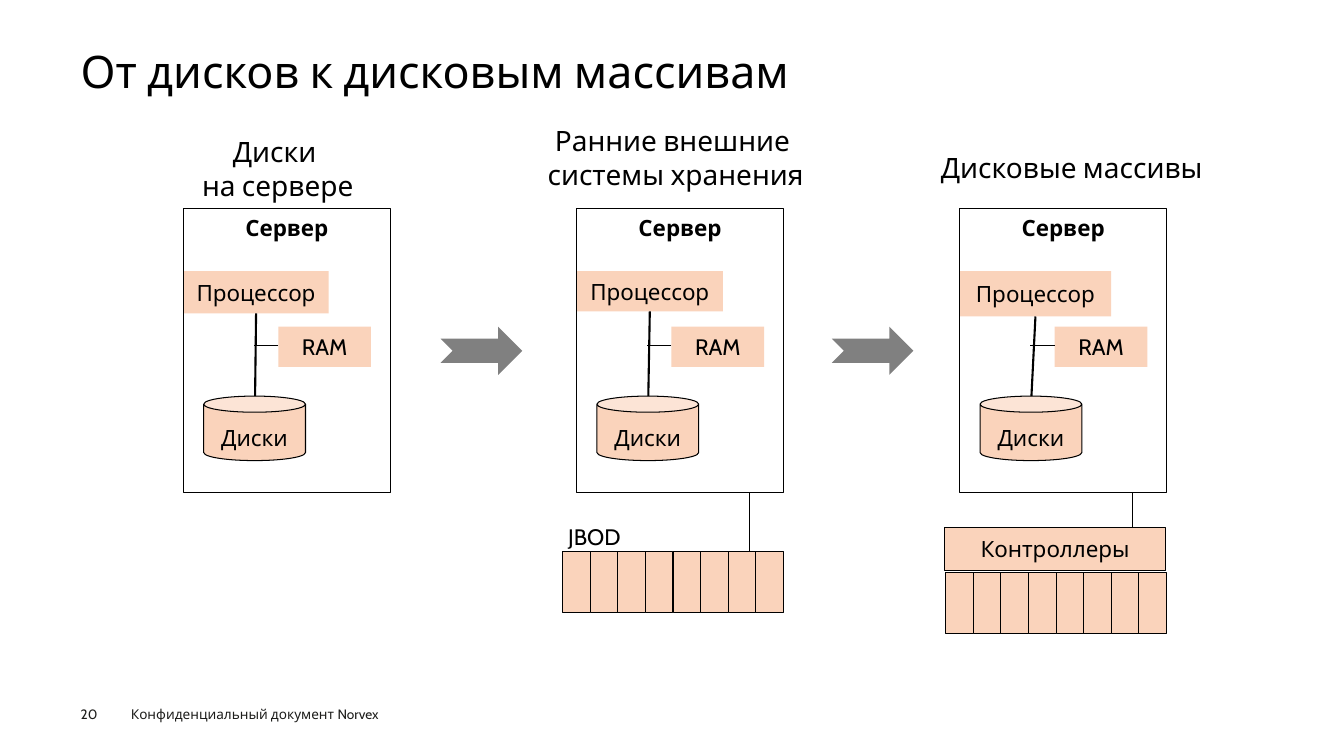
from dataclasses import dataclass

from lxml import etree
from pptx import Presentation
from pptx.dml.color import RGBColor
from pptx.enum import shapes, text
from pptx.oxml import ns
from pptx.util import Inches, Pt


@dataclass(frozen=True)
class Theme:
    font: str = "Cabin"
    black: str = "000000"
    footer: str = "1D1D1B"
    peach: str = "FAD3BB"
    gray: str = "808080"
    title_size: float = 32
    heading_size: float = 20
    label_size: float = 16
    footer_size: float = 9.7
    thin: float = 0.75
    thick: float = 1.5


THEME = Theme()
KIND = shapes.MSO_SHAPE
ANCHOR = text.MSO_ANCHOR
ALIGN = text.PP_ALIGN

presentation = Presentation()
presentation.slide_width = Inches(13.33)
presentation.slide_height = Inches(7.5)
slide = presentation.slides.add_slide(presentation.slide_layouts[5])


def add_item(kind, box, lines=(), fill=None, outline=False, size=THEME.label_size,
             color=THEME.black, bold=False, align=ALIGN.CENTER, **frame_format):
    """Add a preset shape, or a text box when kind is None; box is in inches."""
    box = [Inches(value) for value in box]
    if kind is None:
        shape = slide.shapes.add_textbox(*box)
    else:
        shape = slide.shapes.add_shape(kind, *box)
        shape.shadow.inherit = False
        if fill:
            shape.fill.solid()
            shape.fill.fore_color.rgb = RGBColor.from_string(fill)
        else:
            shape.fill.background()
        if outline:
            shape.line.color.rgb = RGBColor.from_string(THEME.black)
            shape.line.width = Pt(THEME.thin)
        else:
            shape.line.fill.background()
    frame = shape.text_frame
    for name, value in frame_format.items():
        setattr(frame, name, value)
    for index, line in enumerate(lines):
        paragraph = frame.add_paragraph() if index else frame.paragraphs[0]
        paragraph.alignment = align
        run = paragraph.add_run()
        run.text = line
        font_format = {"name": THEME.font, "size": Pt(size), "bold": bold}
        for name, value in font_format.items():
            setattr(run.font, name, value)
        run.font.color.rgb = RGBColor.from_string(color)


def add_line(start, end, width=THEME.thin):
    ends = [Inches(value) for value in (*start, *end)]
    connector = slide.shapes.add_connector(shapes.MSO_CONNECTOR.STRAIGHT, *ends)
    connector.line.color.rgb = RGBColor.from_string(THEME.black)
    connector.line.width = Pt(width)
    etree.SubElement(connector._element.spPr, ns.qn("a:effectLst"))


# Title
title = slide.shapes.title
title_box = {"left": 0.8, "top": 0.49, "width": 11.73, "height": 0.54}
for name, value in title_box.items():
    setattr(title, name, Inches(value))
title_frame = title.text_frame
frame_format = {"margin_left": 0, "margin_top": 0, "margin_right": 0, "margin_bottom": 0,
                "vertical_anchor": ANCHOR.TOP, "auto_size": text.MSO_AUTO_SIZE.NONE}
for name, value in frame_format.items():
    setattr(title_frame, name, value)
title_frame.text = "От дисков к дисковым массивам"
title_paragraph = title_frame.paragraphs[0]
title_paragraph.alignment = ALIGN.LEFT
title_paragraph.line_spacing = 0.9
title_font = title_paragraph.runs[0].font
for name, value in {"name": THEME.font, "size": Pt(THEME.title_size)}.items():
    setattr(title_font, name, value)
title_font.color.rgb = RGBColor.from_string(THEME.black)

# Servers: left edge, processor width and height
server_top, server_width, server_height = 2.07, 2.05, 2.82
server_bottom = server_top + server_height
disk_top, ram_middle = 3.93, 3.43
for left, cpu_width, cpu_height in [(1.82, 1.44, 0.42), (5.72, 1.45, 0.4), (9.52, 1.5, 0.45)]:
    cpu_top, disk_left, ram_left = 2.69, left + 0.2, left + 0.94
    bus_bottom = disk_left + 0.51
    add_item(KIND.RECTANGLE, (left, cpu_top, cpu_width, cpu_height), ["Процессор"],
             THEME.peach, vertical_anchor=ANCHOR.MIDDLE)
    add_item(KIND.RECTANGLE, (ram_left, 3.24, 0.92, 0.4), ["RAM"],
             THEME.peach, vertical_anchor=ANCHOR.MIDDLE)
    add_item(KIND.CAN, (disk_left, disk_top, 1.01, 0.64), ["Диски"], THEME.peach, outline=True,
             vertical_anchor=ANCHOR.MIDDLE, margin_top=Inches(0.1), margin_bottom=0)
    add_line((left + cpu_width / 2, cpu_top + cpu_height), (bus_bottom, disk_top), THEME.thick)
    add_line((ram_left, ram_middle), (bus_bottom - 0.01, ram_middle))
    add_item(KIND.RECTANGLE, (left, server_top, server_width, server_height), ["Сервер"],
             outline=True, bold=True, vertical_anchor=ANCHOR.TOP)

# Disk shelves, each linked to its server
shelf_width, disk_count = 2.19, 8
disk_width = shelf_width / disk_count
for shelf_left, shelf_top in [(5.58, 5.47), (9.38, 5.68)]:
    for index in range(disk_count):
        add_item(KIND.RECTANGLE, (shelf_left + index * disk_width, shelf_top, disk_width, 0.61),
                 fill=THEME.peach, outline=True)
    link_x = shelf_left + 1.85
    add_line((link_x, server_bottom), (link_x, 5.48))
add_item(None, (5.51, 5.14, 0.77, 0.38), ["JBOD"], word_wrap=False)
add_item(KIND.RECTANGLE, (9.37, 5.23, shelf_width, 0.43), ["Контроллеры"],
         THEME.peach, outline=True, vertical_anchor=ANCHOR.MIDDLE)

# Headings
for box, lines in [
    ((1.88, 1.29, 1.75, 0.77), ["Диски ", "на сервере"]),
    ((5.31, 1.18, 2.78, 0.77), ["Ранние внешние ", "системы хранения"]),
    ((9.18, 1.44, 2.9, 0.44), ["Дисковые массивы"]),
]:
    add_item(None, box, lines, size=THEME.heading_size, word_wrap=False)

# Arrows between the stages
for arrow_left in (4.37, 8.25):
    add_item(KIND.NOTCHED_RIGHT_ARROW, (arrow_left, 3.24, 0.81, 0.48), fill=THEME.gray)

# Footer
footer_format = {"size": THEME.footer_size, "color": THEME.footer, "align": ALIGN.LEFT,
                 "word_wrap": True}
add_item(None, (1.2, 6.95, 3.44, 0.26), ["Конфиденциальный документ Norvex"], **footer_format)
add_item(None, (0.8, 7, 0.55, 0.16), ["20"], margin_left=0, margin_top=0,
         margin_right=0, margin_bottom=0, **footer_format)

presentation.save("out.pptx")
